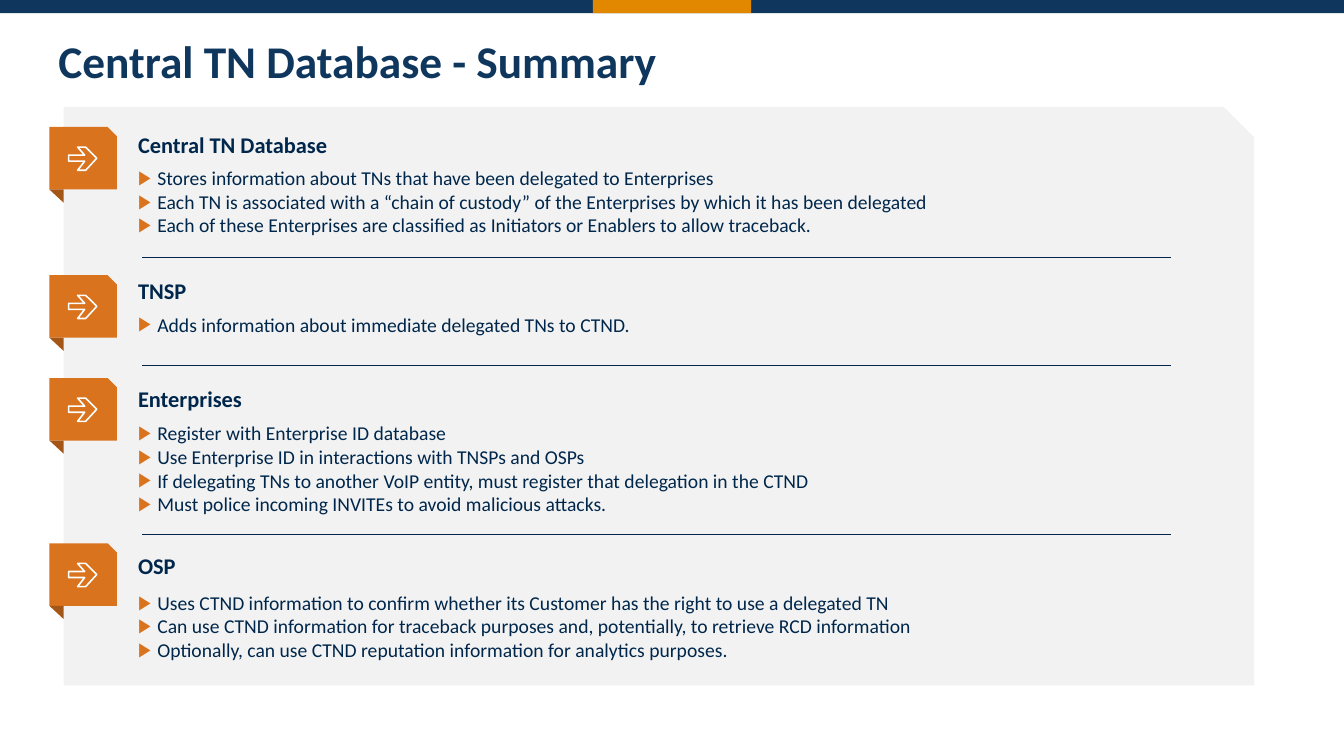
"""Build the Central TN Database summary slide."""
from dataclasses import dataclass

from lxml.etree import SubElement
from pptx import Presentation
from pptx.dml.color import RGBColor
from pptx.enum.shapes import MSO_CONNECTOR, MSO_SHAPE
from pptx.enum.text import MSO_ANCHOR, MSO_AUTO_SIZE, PP_ALIGN
from pptx.oxml.ns import qn
from pptx.util import Inches, Pt

TITLE = "Central TN Database - Summary"
SECTIONS = [
    {"heading": "Central TN Database", "badge": 1.26, "top": 1.30, "list": 1.65, "items": [
        "Stores information about TNs that have been delegated to Enterprises",
        "Each TN is associated with a “chain of custody” of the Enterprises by which it has been delegated",
        "Each of these Enterprises are classified as Initiators or Enablers to allow traceback."]},
    {"heading": "TNSP", "badge": 2.73, "top": 2.75, "list": 3.10, "items": [
        "Adds information about immediate delegated TNs to CTND."]},
    {"heading": "Enterprises", "badge": 3.75, "top": 3.82, "list": 4.18, "items": [
        "Register with Enterprise ID database",
        "Use Enterprise ID in interactions with TNSPs and OSPs",
        "If delegating TNs to another VoIP entity, must register that delegation in the CTND",
        "Must police incoming INVITEs to avoid malicious attacks."]},
    {"heading": "OSP", "badge": 5.39, "top": 5.48, "list": 5.86, "items": [
        "Uses CTND information to confirm whether its Customer has the right to use a delegated TN",
        "Can use CTND information for traceback purposes and, potentially, to retrieve RCD information",
        "Optionally, can use CTND reputation information for analytics purposes."]},
]
DIVIDERS = [2.55, 3.62, 5.30]
ARROW = [(0, 0.08), (0.16, 0.08), (0.09, 0), (0.17, 0), (0.28, 0.11),
         (0.17, 0.23), (0.09, 0.23), (0.16, 0.14), (0, 0.14)]

SLIDE_WIDTH, SLIDE_HEIGHT = 13.33, 7.5
BAR_HEIGHT = 0.13
BADGE_LEFT, BADGE_WIDTH, BADGE_HEIGHT = 0.49, 0.67, 0.62
ARROW_LEFT, ARROW_DROP = 0.68, 0.20
TEXT_LEFT, HEADING_WIDTH, LIST_WIDTH = 1.37, 10.43, 9.92
HEADING_HEIGHT, LINE_HEIGHT = 0.27, 0.24
DIVIDER_LEFT, DIVIDER_RIGHT = 1.41, 11.61
BULLET_INDENT = 0.19


@dataclass(frozen=True)
class Theme:
    font: str = "Calibri"
    navy: str = "0F375D"
    ink: str = "00274B"
    gold: str = "E28700"
    orange: str = "D9731D"
    fold: str = "A35616"
    panel: str = "F2F2F2"
    white: str = "FFFFFF"
    title_size: float = 32.4
    heading_size: float = 16
    list_size: float = 14
    divider_width: float = 0.5
    arrow_width: float = 1.13


THEME = Theme()


def place(shape, left, top, width, height):
    shape.left, shape.top = Inches(left), Inches(top)
    shape.width, shape.height = Inches(width), Inches(height)


def add_block(shapes, kind, box, color, snip=None):
    shape = shapes.add_shape(kind, *map(Inches, box))
    shape.shadow.inherit = False
    shape.fill.solid()
    shape.fill.fore_color.rgb = RGBColor.from_string(color)
    shape.line.fill.background()
    if snip is not None:
        shape.adjustments[0] = snip
    return shape


def add_bullet(paragraph):
    properties = paragraph._p.get_or_add_pPr()
    properties.set("marL", str(Inches(BULLET_INDENT)))
    properties.set("indent", str(-Inches(BULLET_INDENT)))
    color = SubElement(properties, qn("a:buClr"))
    SubElement(color, qn("a:srgbClr"), val=THEME.orange)
    SubElement(properties, qn("a:buFont"), typeface=THEME.font)
    SubElement(properties, qn("a:buChar"), char="▶")


def write_text(shape, lines, size, color, bold=False, bullets=False,
               insets=(0, 0, 0, 0), anchor=MSO_ANCHOR.TOP, fit=MSO_AUTO_SIZE.SHAPE_TO_FIT_TEXT):
    frame = shape.text_frame
    frame.word_wrap = True
    frame.auto_size = fit
    frame.vertical_anchor = anchor
    frame.margin_left, frame.margin_top, frame.margin_right, frame.margin_bottom = map(Inches, insets)
    frame.text = "\n".join(lines)
    for paragraph in frame.paragraphs:
        paragraph.alignment = PP_ALIGN.LEFT
        paragraph.space_before = paragraph.space_after = Pt(0)
        if bullets:
            add_bullet(paragraph)
        font = paragraph.runs[0].font
        font.name, font.size, font.bold = THEME.font, Pt(size), bold
        font.color.rgb = RGBColor.from_string(color)


def add_divider(shapes, top):
    line = shapes.add_connector(MSO_CONNECTOR.STRAIGHT, Inches(DIVIDER_LEFT), Inches(top),
                                Inches(DIVIDER_RIGHT), Inches(top))
    line.line.color.rgb = RGBColor.from_string(THEME.ink)
    line.line.width = Pt(THEME.divider_width)
    SubElement(line._element.spPr, qn("a:effectLst"))


def add_badge(shapes, top):
    group = shapes.add_group_shape().shapes
    add_block(group, MSO_SHAPE.SNIP_1_RECTANGLE,
              (BADGE_LEFT, top, BADGE_WIDTH, BADGE_HEIGHT), THEME.orange, snip=0.149)
    fold = add_block(group, MSO_SHAPE.RIGHT_TRIANGLE,
                     (BADGE_LEFT, top + BADGE_HEIGHT, 0.14, 0.13), THEME.fold)
    fold.rotation = 180
    points = [(Inches(ARROW_LEFT + x), Inches(top + ARROW_DROP + y)) for x, y in ARROW]
    builder = group.build_freeform(*points[0])
    builder.add_line_segments(points[1:], close=True)
    arrow = builder.convert_to_shape()
    arrow.shadow.inherit = False
    arrow.fill.background()
    arrow.line.color.rgb = RGBColor.from_string(THEME.white)
    arrow.line.width = Pt(THEME.arrow_width)


def main():
    presentation = Presentation()
    presentation.slide_width, presentation.slide_height = Inches(SLIDE_WIDTH), Inches(SLIDE_HEIGHT)
    slide = presentation.slides.add_slide(presentation.slide_layouts.get_by_name("Comparison"))
    shapes = slide.shapes
    title, *bodies = list(slide.placeholders)[:1 + len(SECTIONS)]
    for placeholder in list(slide.placeholders)[1 + len(SECTIONS):]:
        placeholder._element.getparent().remove(placeholder._element)

    add_block(shapes, MSO_SHAPE.RECTANGLE, (0, 0, SLIDE_WIDTH, BAR_HEIGHT), THEME.navy)
    add_block(shapes, MSO_SHAPE.RECTANGLE, (5.88, 0, 1.57, BAR_HEIGHT), THEME.gold)
    place(title, 0.48, 0.29, 12.36, 0.58)
    write_text(title, [TITLE], THEME.title_size, THEME.navy, bold=True,
               insets=(0.1, 0.08, 0.1, 0.04), anchor=MSO_ANCHOR.MIDDLE, fit=MSO_AUTO_SIZE.NONE)
    add_block(shapes, MSO_SHAPE.SNIP_1_RECTANGLE, (0.63, 1.06, 11.81, 5.74), THEME.panel, snip=0.053)

    for top in DIVIDERS:
        add_divider(shapes, top)
    for section, body in zip(SECTIONS, bodies):
        add_badge(shapes, section["badge"])
        heading = shapes.add_textbox(*map(Inches, (TEXT_LEFT, section["top"], HEADING_WIDTH, HEADING_HEIGHT)))
        write_text(heading, [section["heading"]], THEME.heading_size, THEME.ink, bold=True)
        place(body, TEXT_LEFT, section["list"], LIST_WIDTH, LINE_HEIGHT * len(section["items"]))
        write_text(body, section["items"], THEME.list_size, THEME.ink, bullets=True)
        shapes._spTree.append(body._element)

    presentation.save("out.pptx")


if __name__ == "__main__":
    main()
